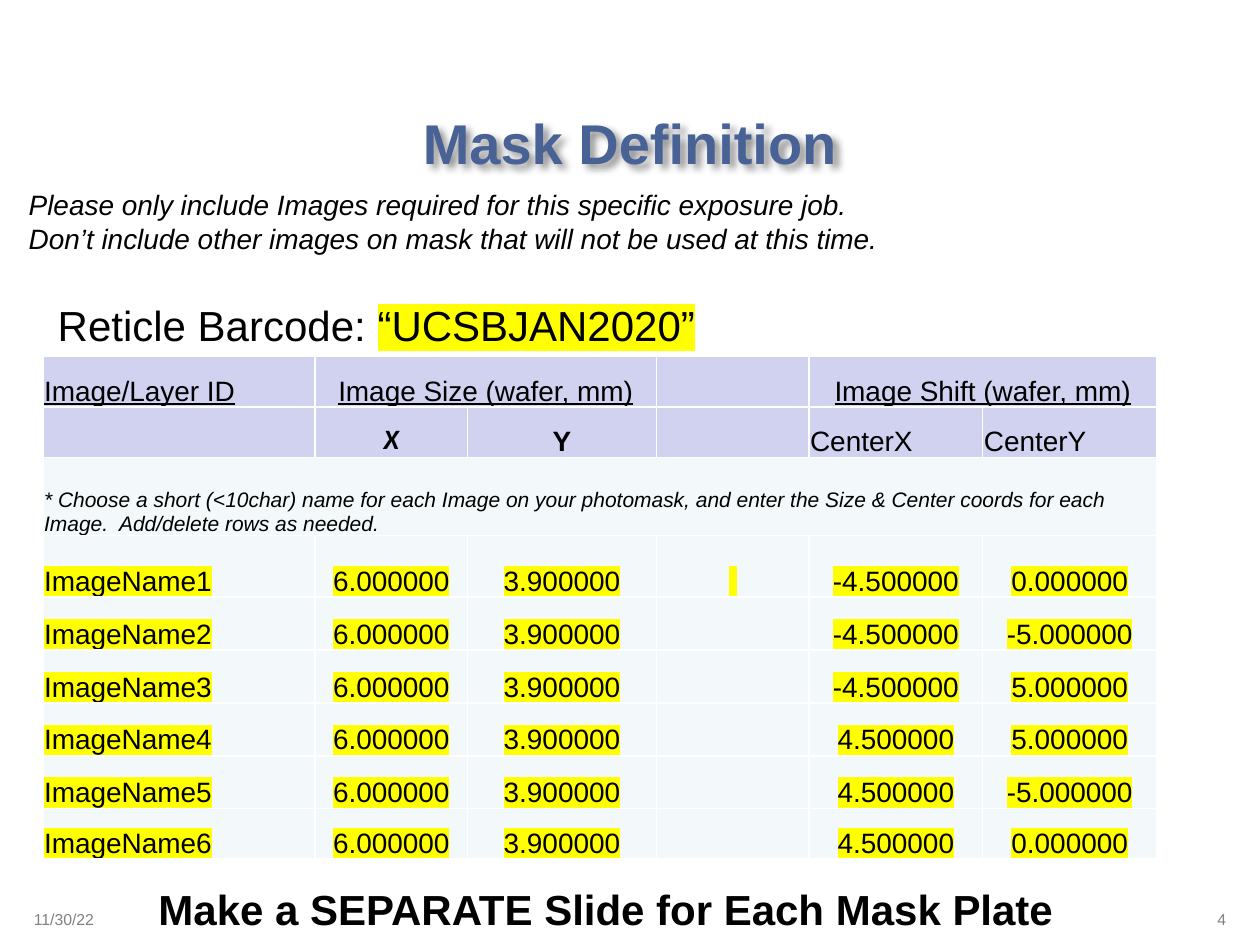
import pptx
import pptx.util
import pptx.dml.color
import pptx.enum.text
import pptx.oxml
import pptx.oxml.ns
import lxml.etree as etree

Inches, Pt = pptx.util.Inches, pptx.util.Pt
RGBColor = pptx.dml.color.RGBColor
ALIGN = pptx.enum.text.PP_ALIGN
ANCHOR = pptx.enum.text.MSO_ANCHOR
qn = pptx.oxml.ns.qn

BLUE = RGBColor(0x48, 0x62, 0x96)
BLACK = RGBColor(0, 0, 0)
GRAY = RGBColor(0x80, 0x80, 0x80)
WHITE = RGBColor(0xFF, 0xFF, 0xFF)
YELLOW = RGBColor(0xFF, 0xFF, 0)
HEADER = RGBColor(0xD1, 0xD1, 0xF0)
BODY = RGBColor(0xF3, 0xF9, 0xFA)

TITLE = "Mask Definition"
BARCODE = "“UCSBJAN2020”"
TEXTS = [
    ((0.17, 7.17, 2.08, 0.25), ["11/30/22"], dict(size=9, color=GRAY), True),
    ((7.75, 7.17, 2.08, 0.25), ["4"], dict(size=9, color=GRAY, align=ALIGN.RIGHT), True),
    ((0.13, 1.44, 7.03, 0.64),
     ["Please only include Images required for this specific exposure job.",
      "Don’t include other images on mask that will not be used at this time."],
     dict(size=16, italic=True), False),
    ((0.36, 2.33, 5.32, 0.5), ["Reticle Barcode: "], dict(size=24), False),
    ((1.16, 6.96, 7.37, 0.5), ["Make a SEPARATE Slide for Each Mask Plate"],
     dict(size=24, bold=True), False),
]
NOTE = ("* Choose a short (<10char) name for each Image on your photomask, and enter "
        "the Size & Center coords for each Image.  Add/delete rows as needed.")
SIZE = ("6.000000", "3.900000")
SHIFTS = [("-4.500000", "0.000000"), ("-4.500000", "-5.000000"), ("-4.500000", "5.000000"),
          ("4.500000", "5.000000"), ("4.500000", "-5.000000"), ("4.500000", "0.000000")]
ROWS = [
    ("Image/Layer ID", "Image Size (wafer, mm)", "", "", "Image Shift (wafer, mm)", ""),
    ("", "X", "Y", "", "CenterX", "CenterY"),
    (NOTE, "", "", "", "", ""),
] + [(f"ImageName{i}", *SIZE, " " if i == 1 else "", *shift)
     for i, shift in enumerate(SHIFTS, 1)]
COLS = [2.16, 1.21, 1.5, 1.21, 1.38, 1.38]
HEIGHTS = [0.4, 0.4, 0.62, 0.49, 0.42, 0.42, 0.42, 0.42, 0.4]
MERGES = [((0, 1), (0, 2)), ((0, 4), (0, 5)), ((2, 0), (2, 5))]
LEFT_ALIGNED = {(1, 4), (1, 5)}
CELL_STYLES = {(1, 1): dict(name="Calibri", bold=True, italic=True),
               (1, 2): dict(bold=True)}


def style(p, size, color=BLACK, name="Arial", align=ALIGN.LEFT, **marks):
    p.alignment = align
    p.font.size, p.font.name = Pt(size), name
    p.font.color.rgb = color
    for mark, value in marks.items():
        setattr(p.font, mark, value)


def highlight(r):
    mark = etree.SubElement(r._r.get_or_add_rPr(), qn("a:highlight"))
    etree.SubElement(mark, qn("a:srgbClr"), val=str(YELLOW))


def border(cell):
    tcPr = cell._tc.get_or_add_tcPr()
    for side in ("lnL", "lnR", "lnT", "lnB"):
        ln = etree.SubElement(tcPr, qn("a:" + side), w=str(Pt(1)))
        fill = etree.SubElement(ln, qn("a:solidFill"))
        etree.SubElement(fill, qn("a:srgbClr"), val=str(WHITE))


def add_title(slide):
    s = slide.shapes.title
    s.left, s.top, s.width, s.height = map(Inches, (0.75, 0.75, 8.5, 0.75))
    s.text_frame.text = TITLE
    s.text_frame.vertical_anchor = ANCHOR.MIDDLE
    style(s.text_frame.paragraphs[0], 32, BLUE, align=ALIGN.CENTER, bold=True)
    effects = etree.SubElement(s._element.spPr, qn("a:effectLst"))
    shadow = etree.SubElement(effects, qn("a:outerShdw"), blurRad=str(Pt(4)),
                              dist=str(Pt(3)), dir="2700000", algn="tl")
    color = etree.SubElement(shadow, qn("a:srgbClr"), val=str(BLACK))
    etree.SubElement(color, qn("a:alpha"), val="43000")


def add_table(slide):
    frame = slide.shapes.add_table(len(ROWS), len(COLS), Inches(0.34), Inches(2.83),
                                   Inches(sum(COLS)), Inches(sum(HEIGHTS)))
    table = frame.table
    table.first_row = table.horz_banding = False
    for column, width in zip(table.columns, COLS):
        column.width = Inches(width)
    for row, height in zip(table.rows, HEIGHTS):
        row.height = Inches(height)
    for start, end in MERGES:
        table.cell(*start).merge(table.cell(*end))
    for i, row in enumerate(ROWS):
        for j, text in enumerate(row):
            cell = table.cell(i, j)
            border(cell)
            cell.fill.solid()
            cell.fill.fore_color.rgb = HEADER if i < 2 else BODY
            cell.vertical_anchor = ANCHOR.BOTTOM
            cell.margin_left = cell.margin_right = cell.margin_top = Inches(0.01)
            cell.margin_bottom = 0
            p = cell.text_frame.paragraphs[0]
            left = j == 0 or (i, j) in LEFT_ALIGNED
            look = dict(size=12 if i == 2 else 16, italic=i == 2, underline=i == 0,
                        align=ALIGN.LEFT if left else ALIGN.CENTER)
            style(p, **{**look, **CELL_STYLES.get((i, j), {})})
            if text:
                r = p.add_run()
                r.text = text
                if i > 2:
                    highlight(r)


def add_texts(slide):
    for box, lines, look, wrap in TEXTS:
        tf = slide.shapes.add_textbox(*map(Inches, box)).text_frame
        tf.word_wrap = wrap
        tf.text = "\n".join(lines)
        for p in tf.paragraphs:
            style(p, **look)
        if lines[0].startswith("Reticle"):
            r = tf.paragraphs[0].add_run()
            r.text = BARCODE
            highlight(r)


def main():
    prs = pptx.Presentation()
    prs.slide_width, prs.slide_height = Inches(10), Inches(7.5)
    slide = prs.slides.add_slide(prs.slide_layouts[5])
    add_title(slide)
    add_table(slide)
    add_texts(slide)
    prs.save("out.pptx")


if __name__ == "__main__":
    main()
